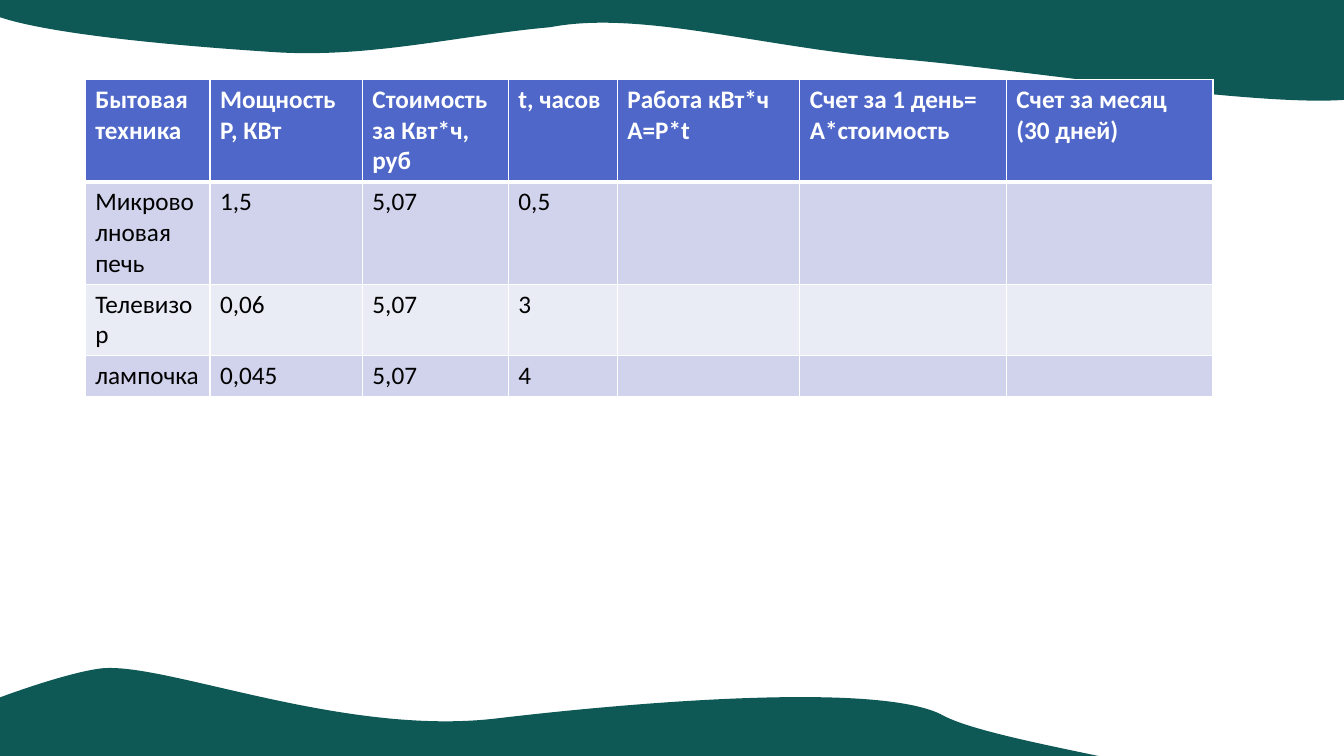
from math import cos, radians, sin
from lxml.etree import SubElement
from pptx import Presentation
from pptx.dml.color import RGBColor
from pptx.oxml.ns import qn
from pptx.util import Pt


def color(value):
    return RGBColor.from_string(value)


def add_border(cell, side, width):
    line = SubElement(cell._tc.get_or_add_tcPr(), qn(f"a:ln{side}"), w=str(Pt(width)))
    fill = SubElement(line, qn("a:solidFill"))
    SubElement(fill, qn("a:srgbClr"), val="FFFFFF")


presentation = Presentation()
presentation.slide_width = Pt(960)
presentation.slide_height = Pt(540)
slide = presentation.slides.add_slide(presentation.slide_layouts[6])
slide.background.fill.solid()
slide.background.fill.fore_color.rgb = color("FFFFFF")

# Waves: a start point, then two control points and an end point per curve
bottom_wave = [
    (-95, 556.6),
    (-124.6, 542.9), (28.1, 482.4), (72.7, 477.4),
    (118.1, 473), (243.4, 525.6), (352.8, 513.4),
    (462.2, 500.4), (631.4, 487.4), (673.9, 511.2),
    (717.1, 534.2), (923.8, 557.3), (899.3, 580.3),
    (874.8, 604.1), (414.7, 561.6), (249.1, 558),
    (83.5, 553.7), (-65.5, 570.2), (-95, 556.6),
]
top_wave = [
    (1010.9, -38.2),
    (1063.4, -23.8), (1022.4, 52.6), (980.6, 67.7),
    (938.2, 83.5), (736.6, 49.7), (638.6, 41.8),
    (540.7, 33.1), (456.5, 7.2), (393.1, 19.4),
    (328.3, 25.2), (267.1, 41), (199.4, 37.4),
    (131, 33.1), (-38.2, 20.2), (-15.1, -4.3),
    (8.6, -29.5), (496.8, -13.7), (667.4, -19.4),
    (838.8, -25.2), (959, -52.6), (1010.9, -38.2),
]
waves = [
    (bottom_wave, (-98.6, 477.4, 1000.1, 110.2), 0),
    (top_wave, (-14.4, -41.8, 1051.2, 139), 176.7),
]
for wave, (left, top, width, height), rotation in waves:
    # Turn the points back into the unrotated frame of the shape
    angle = radians(-rotation)
    local_points = []
    for x, y in wave:
        dx, dy = x - left - width / 2, y - top - height / 2
        local_points.append((Pt(width / 2 + dx * cos(angle) - dy * sin(angle)),
                             Pt(height / 2 + dx * sin(angle) + dy * cos(angle))))
    builder = slide.shapes.build_freeform(*local_points[0])
    builder.add_line_segments(local_points[3::3], close=True)
    shape = builder.convert_to_shape()
    shape.left, shape.top = Pt(left), Pt(top)
    shape.width, shape.height = Pt(width), Pt(height)
    shape.rotation = rotation

    # Redraw the outline with curves
    outline = next(shape._element.iter(qn("a:pathLst")))[0]
    for element in list(outline):
        outline.remove(element)
    outline.set("w", str(Pt(width)))
    outline.set("h", str(Pt(height)))
    segments = [("a:moveTo", local_points[:1])]
    for start in range(1, len(local_points), 3):
        segments.append(("a:cubicBezTo", local_points[start:start + 3]))
    for tag, points in segments + [("a:close", [])]:
        segment = SubElement(outline, qn(tag))
        for x, y in points:
            SubElement(segment, qn("a:pt"), x=str(int(x)), y=str(int(y)))

    shape.shadow.inherit = False
    shape.fill.solid()
    shape.fill.fore_color.rgb = color("0E5856")
    shape.line.fill.background()

# Table of appliances; a line break in a text starts a new paragraph
rows = [
    ["Бытовая техника", "Мощность\nР, КВт", "Стоимость за Квт*ч, руб", "t, часов",
     "Работа кВт*ч\nА=Р*t", "Счет за 1 день=\nА*стоимость", "Счет за месяц (30 дней)"],
    ["Микроволновая печь", "1,5", "5,07", "0,5", "", "", ""],
    ["Телевизор", "0,06", "5,07", "3", "", "", ""],
    ["лампочка", "0,045", "5,07", "4", "", "", ""],
]
column_widths = [89.1, 108.9, 104.3, 77.8, 130.3, 147.6, 147.6]
row_heights = [29.2, 29.2, 14.6, 14.6]
row_fills = ["4E67C8", "D0D3EB", "E9EBF5", "D0D3EB"]
table_frame = slide.shapes.add_table(
    len(rows), len(column_widths), Pt(60.9), Pt(56.7),
    Pt(sum(column_widths)), Pt(sum(row_heights)))
table = table_frame.table
for column, width in zip(table.columns, column_widths):
    column.width = Pt(width)

for row_index, texts in enumerate(rows):
    table.rows[row_index].height = Pt(row_heights[row_index])
    is_header = row_index == 0
    for column_index, text in enumerate(texts):
        cell = table.cell(row_index, column_index)
        add_border(cell, "L", 1)
        add_border(cell, "R", 1)
        add_border(cell, "T", 3 if row_index == 1 else 1)
        add_border(cell, "B", 3 if is_header else 1)
        cell.fill.solid()
        cell.fill.fore_color.rgb = color(row_fills[row_index])
        for line_index, line in enumerate(text.split("\n")):
            frame = cell.text_frame
            paragraph = frame.add_paragraph() if line_index else frame.paragraphs[0]
            if line:
                run = paragraph.add_run()
                run.text = line
                run.font.name = "Calibri"
                run.font.size = Pt(18)
                run.font.bold = is_header
                run.font.color.rgb = color("FFFFFF" if is_header else "000000")
table_frame.height = Pt(223.2)

presentation.save("out.pptx")
